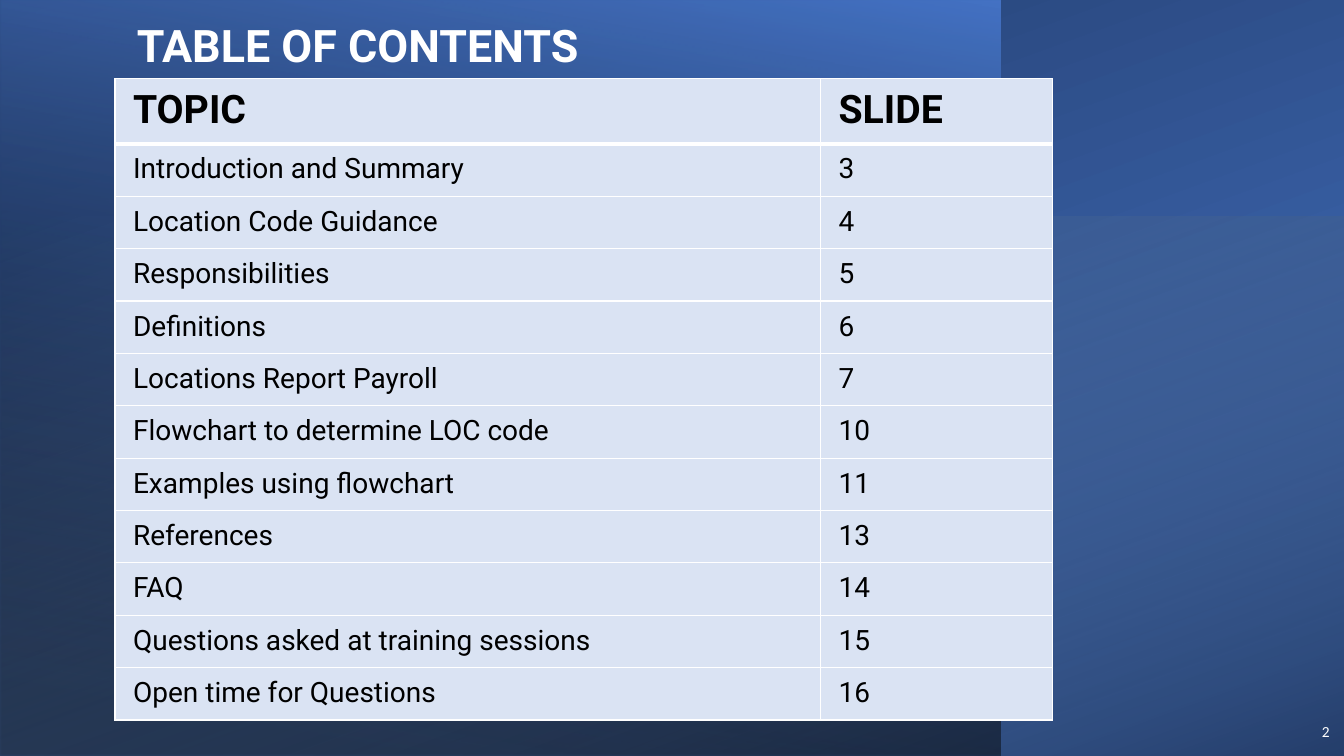
from lxml.etree import SubElement
from pptx import Presentation
from pptx.dml.color import RGBColor
from pptx.enum.shapes import MSO_SHAPE as Shape
from pptx.enum.text import MSO_ANCHOR as Anchor, PP_ALIGN as Align
from pptx.oxml import parse_xml
from pptx.oxml.ns import nsdecls, qn
from pptx.util import Inches, Pt

COLORS = {
    "blue": "4472C4",
    "navy": "203864",
    "sky": "9DC3E6",
    "pale": "DAE3F3",
    "black": "000000",
    "white": "FFFFFF",
}

TOPICS = [
    ("TOPIC", "SLIDE"),
    ("Introduction and Summary", "3"),
    ("Location Code Guidance", "4"),
    ("Responsibilities", "5"),
    ("Definitions", "6"),
    ("Locations Report Payroll", "7"),
    ("Flowchart to determine LOC code", "10"),
    ("Examples using flowchart", "11"),
    ("References", "13"),
    ("FAQ", "14"),
    ("Questions asked at training sessions", "15"),
    ("Open time for Questions", "16"),
]


class ContentsPage:
    """Draws on one slide; all lengths are percentages of its width or height."""

    def __init__(self, deck):
        self.deck = deck
        self.page = deck.slides.add_slide(deck.slide_layouts[6])

    def across(self, share):
        return round(self.deck.slide_width * share / 100)

    def down(self, share):
        return round(self.deck.slide_height * share / 100)

    def frame(self, left, top, width, height):
        return self.across(left), self.down(top), self.across(width), self.down(height)

    def style(self, para, size, color, font="Roboto", bold=False):
        para.font.name = font
        para.font.size = Pt(size)
        para.font.bold = bold
        para.font.color.rgb = RGBColor.from_string(COLORS[color])

    def gradient_panel(self, place, turn, angle, stops):
        """Cover place with a mirrored, turned panel; stops are (position, color, opacity)."""
        left, top, width, height = self.frame(*place)
        if turn % 180:
            left, top = left + (width - height) // 2, top + (height - width) // 2
            width, height = height, width
        panel = self.page.shapes.add_shape(Shape.RECTANGLE, left, top, width, height)
        panel.rotation = turn
        panel.shadow.inherit = False
        panel.line.fill.background()
        panel.fill.gradient()
        panel.fill.gradient_angle = 360 - angle
        for stop, (position, color, _) in zip(panel.fill.gradient_stops, stops):
            stop.position = position / 100
            stop.color.rgb = RGBColor.from_string(COLORS[color])
        properties = panel.element.spPr
        properties.find(qn("a:xfrm")).set("flipH", "1")
        for tint, (_, _, opacity) in zip(properties.iter(qn("a:srgbClr")), stops):
            if opacity < 100:
                SubElement(tint, qn("a:alpha"), val=str(opacity * 1000))

    def text(self, place, words, size, anchor=Anchor.TOP, align=Align.LEFT, after=0, **look):
        box = self.page.shapes.add_textbox(*self.frame(*place))
        box.text_frame.word_wrap = True
        box.text_frame.vertical_anchor = anchor
        para = box.text_frame.paragraphs[0]
        para.text = words
        para.alignment = align
        para.space_after = Pt(after)
        self.style(para, size, "white", **look)

    def borders(self, cell, **widths):
        """Draw white cell borders, given as side=points in the order L, R, T, B."""
        properties = cell._tc.get_or_add_tcPr()
        for place, (side, points) in enumerate(widths.items()):
            properties.insert(place, parse_xml(
                f'<a:ln{side} {nsdecls("a")} w="{Pt(points)}"><a:solidFill>'
                f'<a:srgbClr val="{COLORS["white"]}"/></a:solidFill></a:ln{side}>'))

    def table(self, left, top, columns, header, row, entries):
        heights = [header] + [row] * (len(entries) - 1)
        place = self.frame(left, top, sum(columns), sum(heights))
        table = self.page.shapes.add_table(len(entries), len(columns), *place).table
        table.first_row = table.horz_banding = False
        for column, width in zip(table.columns, columns):
            column.width = self.across(width)
        for index, (height, words) in enumerate(zip(heights, entries)):
            table.rows[index].height = self.down(height)
            is_header = index == 0
            for cell, word in zip(table.rows[index].cells, words):
                cell.text = word
                cell.margin_left = cell.margin_right = Inches(0.18)
                cell.margin_top = cell.margin_bottom = Inches(0.09)
                cell.fill.solid()
                cell.fill.fore_color.rgb = RGBColor.from_string(COLORS["pale"])
                self.style(cell.text_frame.paragraphs[0], 28 if is_header else 20,
                           "black", bold=is_header)
                self.borders(cell, L=1, R=1, T=3 if index == 1 else 1,
                             B=3 if is_header else 1)


def main():
    deck = Presentation()
    deck.slide_width, deck.slide_height = Inches(13.33), Inches(7.5)
    contents = ContentsPage(deck)
    contents.gradient_panel((0, 0, 100, 100), 270, 200,
                            [(8, "blue", 100), (100, "navy", 100)])
    contents.gradient_panel((0, 0, 74.4, 100), 180, 80,
                            [(8, "black", 52), (100, "blue", 100)])
    contents.gradient_panel((0, 28.67, 100, 71.33), 270, 20,
                            [(0, "sky", 0), (100, "black", 46)])
    contents.text((96, 94.13, 3.68, 5.33), "2", 11, Anchor.MIDDLE, Align.RIGHT,
                  after=6, font="Calibri")
    contents.table(8.55, 10.4, (52.5, 17.25), 8.5, 6.93, TOPICS)
    contents.text((9.45, 1.73, 79.95, 12.53), "TABLE OF CONTENTS", 32, bold=True)
    deck.save("out.pptx")


if __name__ == "__main__":
    main()
